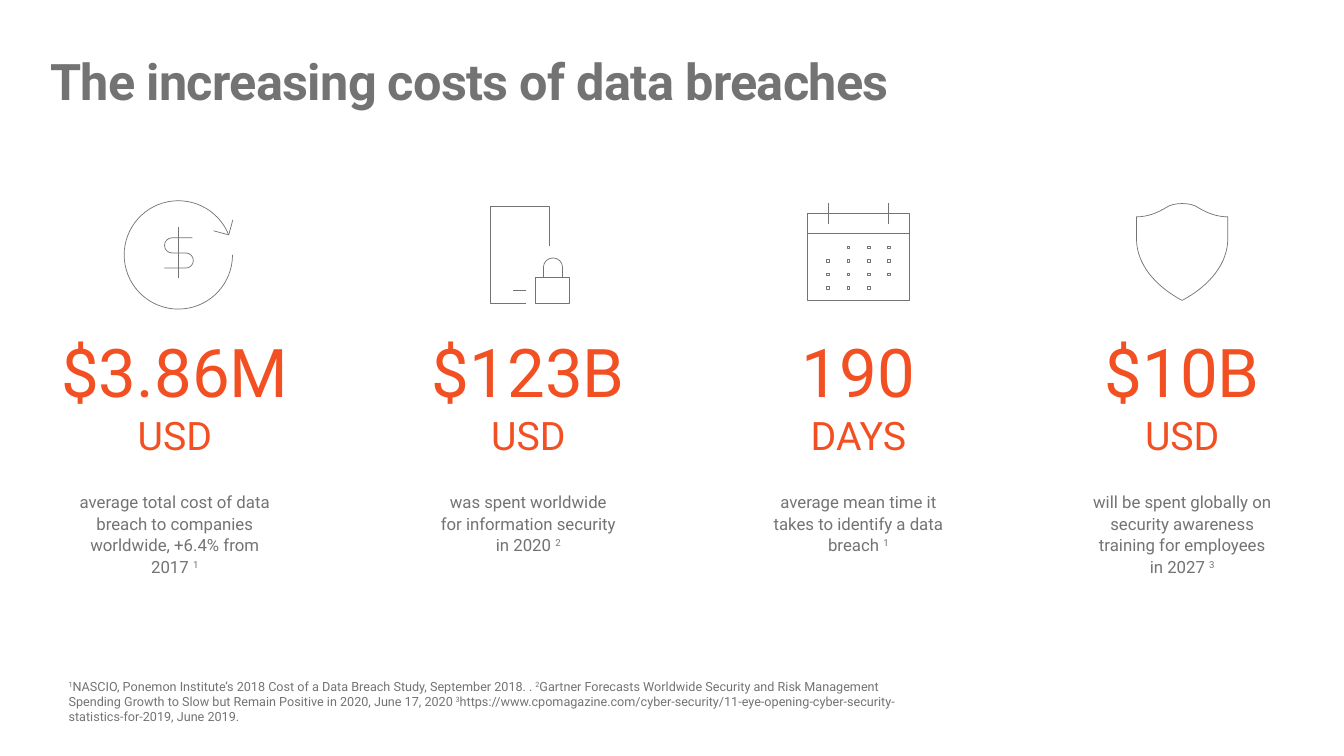
from math import ceil, cos, radians, sin, tan
from pptx import Presentation
from pptx.dml.color import RGBColor
from pptx.enum import text as t
from pptx.oxml import ns, xmlchemy as xc
from pptx.util import Pt

GRAY = RGBColor(0x73, 0x73, 0x73)
ORANGE = RGBColor(0xF2, 0x50, 0x22)
FONT = "Roboto"


# An icon is a list of paths. A path holds points (x, y) and curves; a curve is
# two control points and an end point.
def arc(x, y, rx, ry, start, end):
    """Start point and curves on an ellipse, in degrees clockwise from the right."""
    count = ceil(abs(end - start) / 90)
    step = radians(end - start) / count
    pull = 4 / 3 * tan(step / 4)

    def spot(a, k):
        return x + rx * (cos(a) - k * sin(a)), y + ry * (sin(a) + k * cos(a))

    turns = [radians(start) + step * i for i in range(count)]
    return [spot(turns[0], 0)] + [
        (spot(a, pull), spot(a + step, -pull), spot(a + step, 0)) for a in turns]


def rect(x, y, w, h):
    return [(x, y), (x + w, y), (x + w, y + h), (x, y + h), (x, y)]


def coin():
    ring = arc(127.4, 182.1, 38.7, 38.7, 0, 338)
    head = [(152.6, 164.9), (163.4, 167.8), (166.3, 157)]
    sign = ([(117.4, 191.5)] + arc(132.7, 186.1, 5.4, 5.4, 90, -90)
            + arc(122.9, 175.3, 5.4, 5.4, 90, 270) + [(137.5, 169.9)])
    return [ring, head, sign, [(127.4, 162), (127.4, 198.7)]]


def phone():
    case = [(375.8, 216.7), (350.6, 216.7), (350.6, 147.2),
            (392.4, 147.2), (392.4, 175.7)]
    bow = [(401.8, 198)] + arc(395, 190.8, 6.8, 6.5, 0, -180) + [(388.2, 198)]
    return [case, rect(382.3, 198, 24.5, 18.7), bow, [(366.5, 207.4), (375.8, 207.4)]]


def dates():
    rings = [[(x, 145.3), (x, 159.8)] for x in (591.8, 634.8)]
    days = [rect(590.6 + 14.5 * i, 175.8 + 9.7 * j, 1.9, 1.6)
            for j in range(4) for i in range(4) if (i, j) not in ((0, 0), (3, 3))]
    return [rect(576.7, 152.2, 72.7, 62.4), [(576.7, 166.6), (649.4, 166.6)]] + rings + days


def shield():
    mid, top, tip, rim = 844.4, 145.4, 214.6, 154.9

    def side(x, y):
        return mid + x, y

    return [[
        side(32.6, 170.6),
        (side(32.6, 187.9), side(20.2, 203.8), side(0, tip)),
        (side(-20.2, 203.8), side(-32.6, 187.9), side(-32.6, 170.6)),
        side(-32.6, rim),
        (side(-24.5, rim), side(-17.3, 151.9), side(-11.5, 148.3)),
        (side(-8.6, 146.2), side(-4.3, top), side(0, top)),
        (side(4.3, top), side(8.6, 146.2), side(11.5, 148.3)),
        (side(17.3, 151.9), side(24.5, rim), side(32.6, rim)),
        side(32.6, 170.6)]]


class Deck:
    def __init__(self):
        self.prs = Presentation()
        self.prs.slide_width, self.prs.slide_height = Pt(960), Pt(540)
        self.slide = self.prs.slides.add_slide(self.prs.slide_layouts[5])

    def run(self, para, words, size, color=GRAY, **marks):
        """Add a run; marks are raw run attributes such as baseline."""
        run = para.add_run()
        run.text = words
        font = run.font
        font.name, font.size, font.color.rgb = FONT, Pt(size), color
        for key, val in marks.items():
            run._r.get_or_add_rPr().set(key, str(val))
        return run

    def title(self, words):
        box = self.slide.shapes.title
        box.left, box.top, box.width, box.height = Pt(36), Pt(36), Pt(867.6), Pt(43.9)
        frame = box.text_frame
        frame.margin_left = frame.margin_top = frame.margin_right = frame.margin_bottom = 0
        frame.word_wrap, frame.auto_size = True, t.MSO_AUTO_SIZE.NONE
        frame.vertical_anchor = t.MSO_ANCHOR.TOP
        para = frame.paragraphs[0]
        para.alignment = t.PP_ALIGN.LEFT
        self.run(para, words, 36, spc=-50).font.bold = True

    def box(self, x, y, w, h):
        frame = self.slide.shapes.add_textbox(Pt(x), Pt(y), Pt(w), Pt(h)).text_frame
        frame.word_wrap = True
        return frame

    def notes(self, para, parts, size):
        """Add runs, raising those that are only a note number."""
        for part in parts:
            marks = {"baseline": 30000} if part.isdigit() else {}
            self.run(para, part, size, **marks)

    def figure(self, mid, wide, lines):
        """Add a large number and its unit; each line is a list of words."""
        frame = self.box(mid - wide / 2, 232.3, wide, 99.4)
        sizes = iter((48, 28))
        for i, words in enumerate(lines):
            para = frame.add_paragraph() if i else frame.paragraphs[0]
            para.alignment = t.PP_ALIGN.CENTER
            for word in words:
                self.run(para, word, next(sizes), ORANGE)

    def caption(self, mid, wide, words, mark):
        para = self.box(mid - wide / 2, 346.8, wide, 77.8).paragraphs[0]
        para.alignment, para.line_spacing = t.PP_ALIGN.CENTER, 1.07
        self.notes(para, (words, mark), 12)

    def icon(self, paths):
        """Draw the paths as one outline, then join each curve's three points."""
        pen, bends = None, []
        for path in paths:
            start = [Pt(v) for v in path[0]]
            if pen is None:
                pen = self.slide.shapes.build_freeform(*start, scale=1.0)
            else:
                pen.move_to(*start)
            for step in path[1:]:
                bends.append(len(step) == 3)
                ends = step if bends[-1] else [step]
                pen.add_line_segments([(Pt(x), Pt(y)) for x, y in ends], close=False)
        shape = pen.convert_to_shape()
        segs = iter(list(shape._element.iter(ns.qn("a:lnTo"))))
        for bend in bends:
            seg = next(segs)
            if bend:
                cubic = xc.OxmlElement("a:cubicBezTo")
                seg.addprevious(cubic)
                for part in (seg, next(segs), next(segs)):
                    cubic.append(part[0])
                    part.getparent().remove(part)
        shape.shadow.inherit = False
        shape.fill.background()
        shape.line.color.rgb, shape.line.width = GRAY, Pt(0.5)

    def source(self, parts):
        frame = self.box(49, 490.6, 600, 41)
        frame.margin_left, frame.margin_bottom = 0, Pt(14.4)
        frame.vertical_anchor = t.MSO_ANCHOR.BOTTOM
        para = frame.paragraphs[0]
        para.space_after = Pt(12)
        self.notes(para, parts, 9)


def main():
    deck = Deck()
    deck.title("The increasing costs of data breaches")
    stats = [
        (124.9, 179.3, [["$3.86M ", "USD"]], coin, 151.2,
         "average total cost of data breach to companies worldwide, +6.4% from 2017 ", "1"),
        (377.4, 184.3, [["$123B"], ["USD"]], phone, 141.8,
         "was spent worldwide for information security in 2020 ", "2"),
        (613.2, 160.6, [["190"], ["DAYS"]], dates, 141.8,
         "average mean time it takes to identify a data breach ", "1"),
        (844.5, 160.6, [["$10B"], ["USD"]], shield, 141.8,
         "will be spent globally on security awareness training for employees in 2027 ", "3"),
    ]
    for mid, wide, lines, draw, span, words, mark in stats:
        deck.icon(draw())
        deck.figure(mid, wide, lines)
        deck.caption(mid, span, words, mark)
    deck.source([
        "1", "NASCIO, Ponemon Institute’s 2018 Cost of a Data Breach Study, September 2018. . ",
        "2", "Gartner Forecasts Worldwide Security and Risk Management Spending Growth "
             "to Slow but Remain Positive in 2020, June 17, 2020 ",
        "3", "https://www.cpomagazine.com/cyber-security/"
             "11-eye-opening-cyber-security-statistics-for-2019, June 2019."])
    deck.prs.save("out.pptx")


if __name__ == "__main__":
    main()
